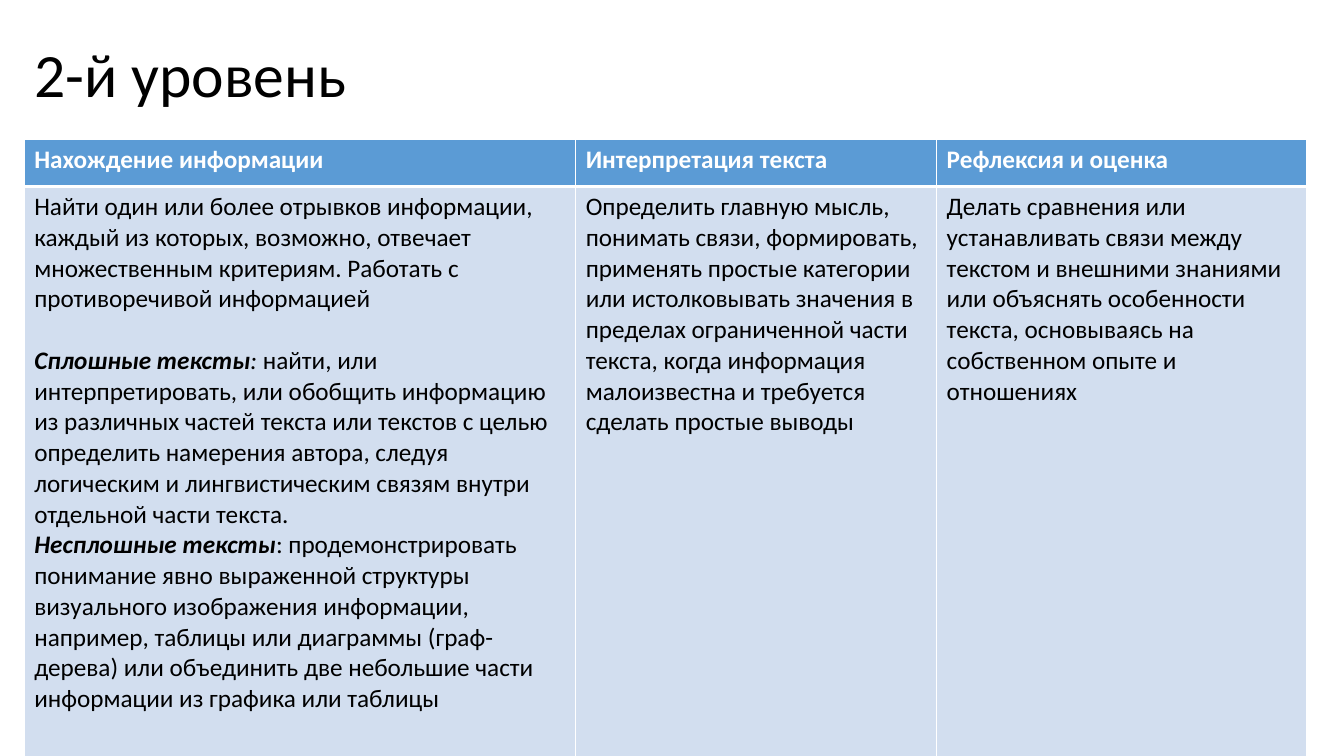
from lxml.etree import SubElement
from pptx import Presentation
from pptx.dml.color import RGBColor
from pptx.enum.text import MSO_ANCHOR as Anchor, PP_ALIGN as Align
from pptx.oxml.ns import qn
from pptx.util import Pt

SCALE = 9144
FONT = "Calibri"
WHITE, BLACK, BLUE, PALE = "FFFFFF", "000000", "5B9BD5", "D2DEEF"
COLS = [547, 358, 367]
ROWS = [47, 706]

HEADS = ["Нахождение информации", "Интерпретация текста", "Рефлексия и оценка"]
FIND = [
    [("Найти один или более отрывков информации, каждый из которых, возможно, "
      "отвечает множественным критериям. Работать с противоречивой информацией", {})],
    [("Сплошные тексты", {"bold": True, "italic": True}),
     (": ", {"italic": True}),
     ("найти, или интерпретировать, или обобщить информацию из различных частей "
      "текста или текстов с целью определить намерения автора, следуя логическим "
      "и лингвистическим связям внутри отдельной части текста.", {})],
    [("Несплошные тексты", {"bold": True, "italic": True}),
     (": продемонстрировать понимание явно выраженной структуры визуального "
      "изображения информации, например, таблицы или диаграммы (граф-дерева) или "
      "объединить две небольшие части информации из графика или таблицы", {})],
]
READ = [[("Определить главную мысль, понимать связи, формировать, применять простые "
          "категории или истолковывать значения в пределах ограниченной части текста, "
          "когда информация малоизвестна и требуется сделать простые выводы", {})]]
JUDGE = [[("Делать сравнения или устанавливать связи между текстом и внешними знаниями "
           "или объяснять особенности текста, основываясь на собственном опыте и "
           "отношениях", {})]]


def px(num):
    return num * SCALE


def paint(code):
    return RGBColor.from_string(code)


def write(para, text, size=18, color=BLACK, bold=False, italic=False):
    run = para.add_run()
    run.text = text
    font = run.font
    font.name, font.size = FONT, Pt(size)
    font.bold, font.italic = bold, italic
    font.color.rgb = paint(color)


def edge(cell, side, width):
    line = SubElement(cell._tc.get_or_add_tcPr(), qn(f"a:ln{side}"), w=str(Pt(width)))
    fill = SubElement(line, qn("a:solidFill"))
    SubElement(fill, qn("a:srgbClr"), val=WHITE)


def style(cell, color, top, base):
    for side, width in zip("LRTB", (1, 1, top, base)):
        edge(cell, side, width)
    cell.fill.solid()
    cell.fill.fore_color.rgb = paint(color)


def fill_cell(cell, paras):
    frame = cell.text_frame
    for i, runs in enumerate(paras):
        para = frame.add_paragraph() if i else frame.paragraphs[0]
        if i == 1:
            para.space_before = Pt(22)
        for text, look in runs:
            write(para, text, **look)


def add_title(slide, text):
    title = slide.shapes.title
    title.left, title.top = px(24), px(16)
    title.width, title.height = px(1272), px(121)
    frame = title.text_frame
    frame.vertical_anchor = Anchor.MIDDLE
    para = frame.paragraphs[0]
    para.alignment = Align.LEFT
    para.line_spacing = 0.9
    write(para, text, size=44)


def add_grid(slide):
    grid = slide.shapes.add_table(
        len(ROWS), len(COLS), px(24), px(138), px(sum(COLS)), px(sum(ROWS))).table
    for col, width in zip(grid.columns, COLS):
        col.width = px(width)
    for row, height in zip(grid.rows, ROWS):
        row.height = px(height)
    for i, (head, body) in enumerate(zip(HEADS, (FIND, READ, JUDGE))):
        top, low = grid.cell(0, i), grid.cell(1, i)
        style(top, BLUE, 1, 3)
        style(low, PALE, 3, 1)
        fill_cell(top, [[(head, {"color": WHITE, "bold": True})]])
        fill_cell(low, body)


def main():
    deck = Presentation()
    deck.slide_width, deck.slide_height = px(1333), px(750)
    slide = deck.slides.add_slide(deck.slide_layouts[5])
    add_title(slide, "2-й уровень")
    add_grid(slide)
    deck.save("out.pptx")


if __name__ == "__main__":
    main()
